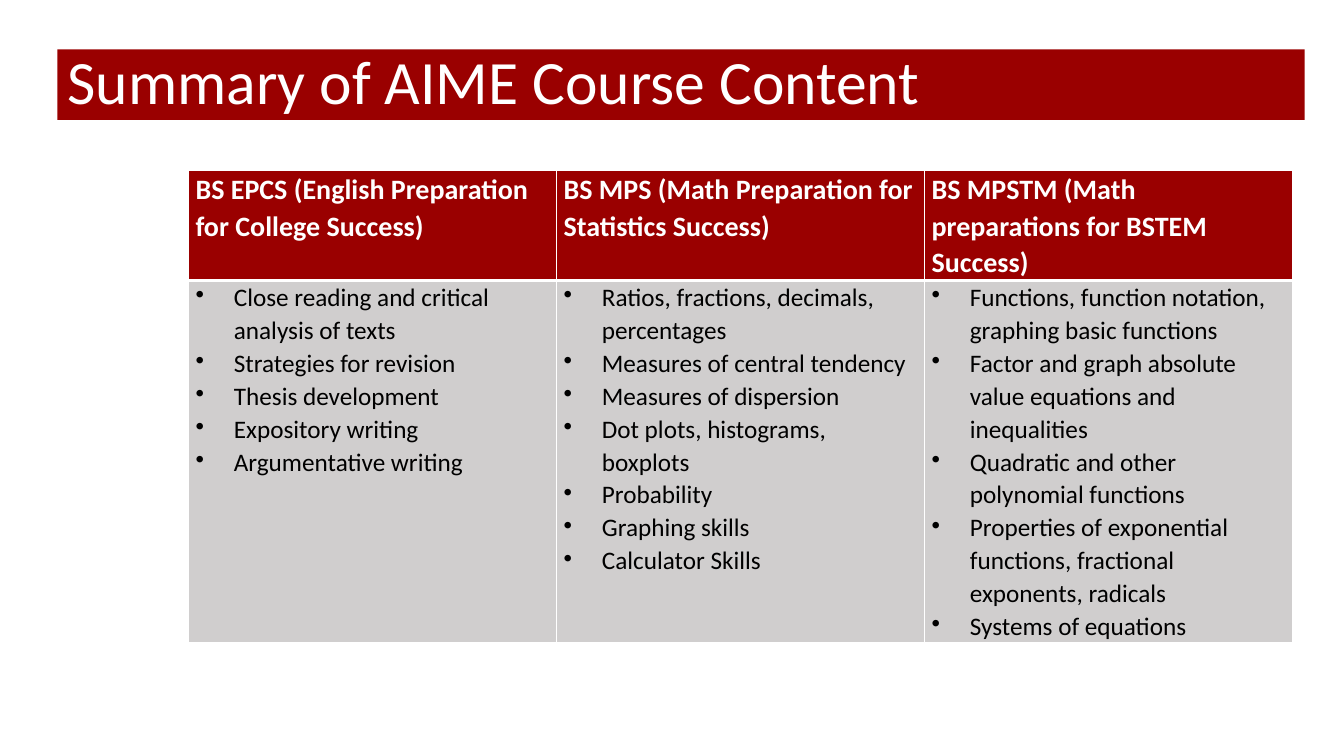
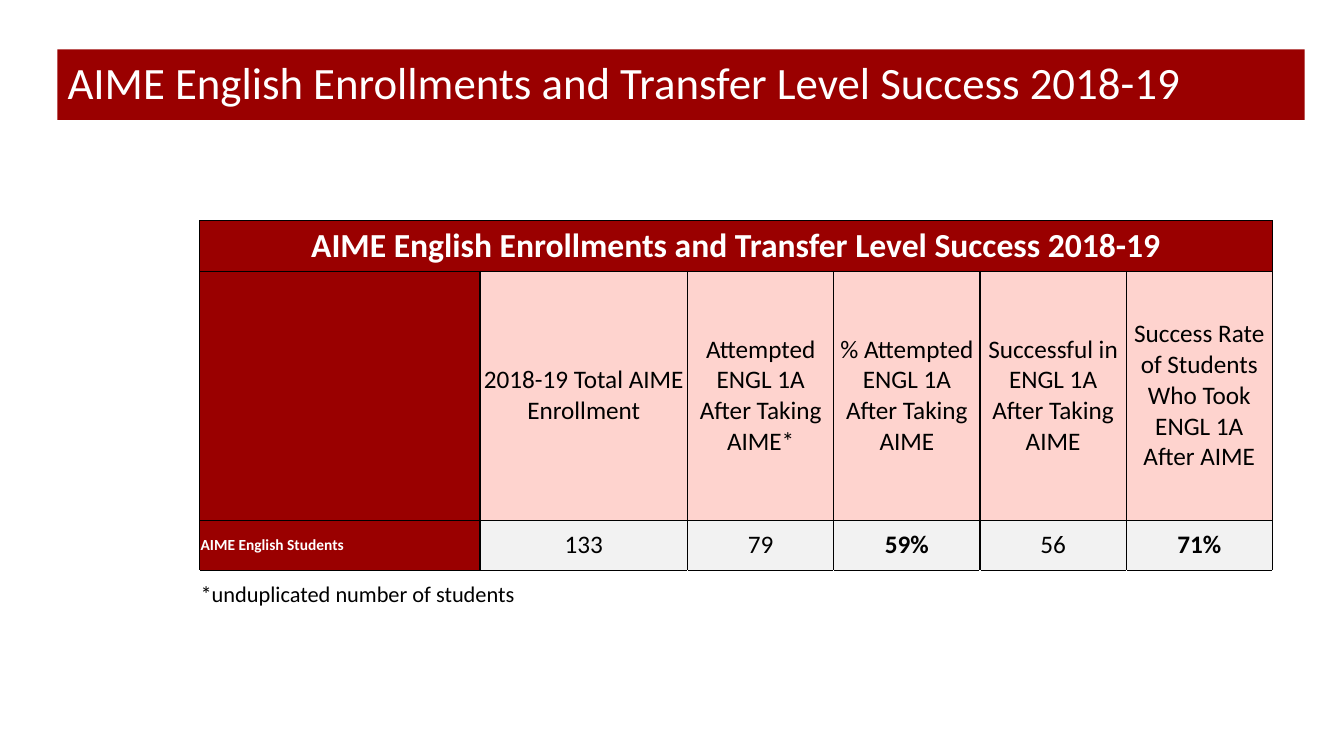
from lxml import etree
from pptx import Presentation
from pptx.dml.color import RGBColor
from pptx.enum.text import MSO_ANCHOR, MSO_AUTO_SIZE, PP_ALIGN
from pptx.oxml.ns import qn
from pptx.util import Inches, Pt

MIDDLE, TOP = MSO_ANCHOR.MIDDLE, MSO_ANCHOR.TOP
LEFT, CENTER = PP_ALIGN.LEFT, PP_ALIGN.CENTER
FIXED = MSO_AUTO_SIZE.NONE

RED = RGBColor(0x9A, 0x00, 0x00)
PINK = RGBColor(0xFE, 0xD3, 0xCE)
GREY = RGBColor(0xD0, 0xCE, 0xCE)
PALE = RGBColor(0xF2, 0xF2, 0xF2)
WHITE = RGBColor(0xFF, 0xFF, 0xFF)
BLACK = RGBColor(0x00, 0x00, 0x00)
FONT = "Calibri"

deck = Presentation()
deck.slide_width, deck.slide_height = Inches(13.33), Inches(7.5)


def add_page(text, size, place, widths, heights):
    """Add a slide with a title band and an empty table, and return the table."""
    page = deck.slides.add_slide(deck.slide_layouts[5])
    title = page.shapes.title
    title.left, title.top = Inches(0.57), Inches(0.49)
    title.width, title.height = Inches(12.37), Inches(0.7)
    title.fill.solid()
    title.fill.fore_color.rgb = RED
    frame = title.text_frame
    frame.text = text
    frame.auto_size, frame.vertical_anchor = FIXED, MIDDLE
    para = frame.paragraphs[0]
    para.alignment, para.line_spacing = LEFT, 0.9
    para.font.name, para.font.size = FONT, Pt(size)
    para.font.color.rgb = WHITE

    left, top = place
    table = page.shapes.add_table(
        len(heights), len(widths), Inches(left), Inches(top),
        Inches(sum(widths)), Inches(sum(heights))).table
    for col, width in zip(table.columns, widths):
        col.width = Inches(width)
    for row, height in zip(table.rows, heights):
        row.height = Inches(height)
    return table


def fill_cell(cell, text, size, color, fill, edges, bold=False,
              align=LEFT, anchor=MIDDLE, inset=0.01):
    """Format a cell; edges maps L, R, T, B to (colour, points)."""
    props = cell._tc.get_or_add_tcPr()
    for side, (tint, width) in edges.items():
        line = etree.SubElement(props, qn(f"a:ln{side}"), w=str(Pt(width)))
        paint = etree.SubElement(line, qn("a:solidFill"))
        etree.SubElement(paint, qn("a:srgbClr"), val=str(tint))
    if fill is None:
        cell.fill.background()
    else:
        cell.fill.solid()
        cell.fill.fore_color.rgb = fill
    cell.margin_left = cell.margin_right = Inches(inset)
    cell.margin_top = cell.margin_bottom = 0
    cell.vertical_anchor = anchor
    cell.text = text
    for para in cell.text_frame.paragraphs:
        para.alignment = align
        font = para.font
        font.name, font.size, font.bold = FONT, Pt(size), bold
        font.color.rgb = color


# Slide 1: course content
courses = {
    "BS EPCS (English Preparation for College Success)": [
        "Close reading and critical analysis of texts",
        "Strategies for revision",
        "Thesis development",
        "Expository writing",
        "Argumentative writing",
    ],
    "BS MPS (Math Preparation for Statistics Success)": [
        "Ratios, fractions, decimals, percentages",
        "Measures of central tendency",
        "Measures of dispersion",
        "Dot plots, histograms, boxplots",
        "Probability",
        "Graphing skills",
        "Calculator Skills",
    ],
    "BS MPSTM (Math preparations for BSTEM Success)": [
        "Functions, function notation, graphing basic functions",
        "Factor and graph absolute value equations and inequalities",
        "Quadratic and other polynomial functions",
        "Properties of exponential functions, fractional exponents, radicals",
        "Systems of equations",
    ],
}
thin, thick = (WHITE, 1), (WHITE, 3)
above = {"L": thin, "R": thin, "T": thin, "B": thick}
below = {"L": thin, "R": thin, "T": thick, "B": thin}

table = add_page("Summary of AIME Course Content", 44, (1.87, 1.69),
                 [3.65] * 3, [1.09, 3.58])
for col, (course, topics) in enumerate(courses.items()):
    head, body = table.cell(0, col), table.cell(1, col)
    fill_cell(head, course, 20, WHITE, RED, above, bold=True,
              anchor=TOP, inset=0.07)
    fill_cell(body, "\n".join(topics), 18, BLACK, GREY, below,
              anchor=TOP, inset=0.07)
    head.text_frame.paragraphs[0].line_spacing = 1.07
    for para in body.text_frame.paragraphs:
        para.line_spacing = 1.07
        props = para._p.get_or_add_pPr()
        props.set("marL", str(Inches(0.38)))
        props.set("indent", str(-Inches(0.38)))
        bullet = etree.Element(qn("a:buChar"), char="•")
        props.find(qn("a:defRPr")).addprevious(bullet)

# Slide 2: enrollments
topic = "AIME English Enrollments and Transfer Level Success 2018-19"
labels = [
    "2018-19 Total AIME Enrollment",
    "Attempted ENGL 1A After Taking AIME*",
    "% Attempted ENGL 1A After Taking AIME",
    "Successful in ENGL 1A After Taking AIME",
    "Success Rate of Students Who Took ENGL 1A After AIME",
]
values = ["133", "79", "59%", "56", "71%"]
rule = (BLACK, 1)
box = {"L": rule, "R": rule, "T": rule, "B": rule}

table = add_page(topic, 32, (1.98, 2.19), [2.78, 2.06] + [1.45] * 4,
                 [0.5, 2.47, 0.5, 0.48])
for col in range(6):
    fill_cell(table.cell(0, col), "" if col else topic, 24, WHITE, RED, box,
              bold=True, align=CENTER)
    fill_cell(table.cell(3, col),
              "" if col else "*unduplicated number of students",
              16, BLACK, None, {"T": rule})
table.cell(0, 0).merge(table.cell(0, 5))
table.cell(3, 0).merge(table.cell(3, 1))

fill_cell(table.cell(1, 0), "", 18, WHITE, RED, box)
fill_cell(table.cell(2, 0), "AIME English Students", 11, WHITE, RED, box,
          bold=True)
for col, (label, value) in enumerate(zip(labels, values), 1):
    fill_cell(table.cell(1, col), label, 18, BLACK, PINK, box, align=CENTER)
    fill_cell(table.cell(2, col), value, 18, BLACK, PALE, box,
              bold=value.endswith("%"), align=CENTER)

deck.save("out.pptx")
